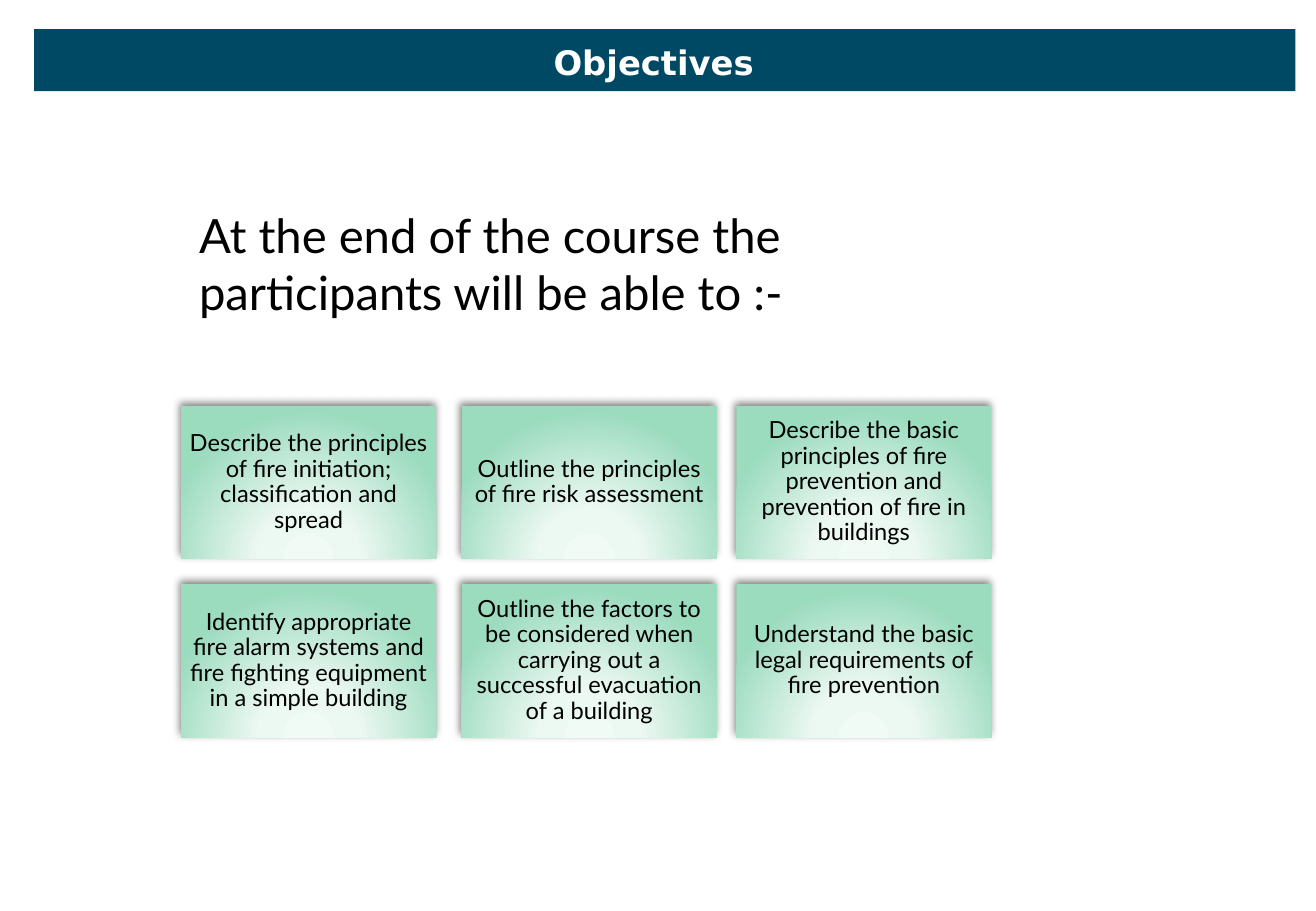
from itertools import product

from pptx import Presentation
from pptx.dml.color import RGBColor
from pptx.enum.shapes import MSO_SHAPE
from pptx.enum.text import MSO_ANCHOR, PP_ALIGN
from pptx.oxml import parse_xml
from pptx.oxml.ns import nsdecls
from pptx.util import Inches, Pt

COLORS = {
    "bar": "004964",
    "heading": "FFFFFF",
    "text": "000000",
    "shadow": "000000",
    "glow": "F0FBF6",
    "pale": "ECF8F2",
    "green": "9BDBBE",
}

GRADIENT = f"""<a:gradFill {nsdecls("a")} rotWithShape="1"><a:gsLst>
<a:gs pos="0"><a:srgbClr val="{COLORS['glow']}"/></a:gs>
<a:gs pos="34000"><a:srgbClr val="{COLORS['pale']}"/></a:gs>
<a:gs pos="100000"><a:srgbClr val="{COLORS['green']}"/></a:gs></a:gsLst>
<a:path path="circle"><a:fillToRect l="50000" t="155000" r="50000" b="-55000"/></a:path>
</a:gradFill>"""

SHADOW = f"""<a:effectLst {nsdecls("a")}>
<a:outerShdw blurRad="{Pt(5)}" dist="{Pt(2)}" dir="14700000" algn="tl" rotWithShape="0">
<a:srgbClr val="{COLORS['shadow']}"><a:alpha val="50000"/></a:srgbClr>
</a:outerShdw></a:effectLst>"""


class ObjectivesSlide:
    body_font = "Lato"
    heading_font = "DejaVu Sans"

    def __init__(self, deck):
        self.slide = deck.slides.add_slide(deck.slide_layouts[5])
        self.shapes = self.slide.shapes

    def set_text(self, frame, text, size, color="text", font=body_font, bold=False,
                 align=PP_ALIGN.LEFT):
        frame.text = text
        paragraph = frame.paragraphs[0]
        paragraph.alignment = align
        run_font = paragraph.runs[0].font
        run_font.name, run_font.size, run_font.bold = font, Pt(size), bold
        run_font.color.rgb = RGBColor.from_string(COLORS[color])
        return paragraph

    def rectangle(self, *place):
        rectangle = self.shapes.add_shape(MSO_SHAPE.RECTANGLE, *map(Inches, place))
        rectangle.line.fill.background()
        return rectangle

    def heading_bar(self, *place):
        bar = self.rectangle(*place)
        bar.shadow.inherit = False
        bar.fill.solid()
        bar.fill.fore_color.rgb = RGBColor.from_string(COLORS["bar"])
        # Send the bar behind the title placeholder
        self.shapes.title._element.addprevious(bar._element)

    def heading(self, text, *place):
        title = self.shapes.title
        title.left, title.top, title.width, title.height = map(Inches, place)
        frame = title.text_frame
        frame.word_wrap = False
        frame.vertical_anchor = MSO_ANCHOR.TOP
        self.set_text(frame, text, 20, "heading", self.heading_font, True, PP_ALIGN.CENTER)

    def intro(self, text, *place):
        frame = self.shapes.add_textbox(*map(Inches, place)).text_frame
        frame.word_wrap = True
        self.set_text(frame, text, 28)

    def card(self, text, *place):
        card = self.rectangle(*place)
        properties = card._element.spPr
        properties.insert(2, parse_xml(GRADIENT))
        properties.append(parse_xml(SHADOW))
        frame = card.text_frame
        frame.word_wrap = True
        frame.vertical_anchor = MSO_ANCHOR.MIDDLE
        frame.margin_left = frame.margin_right = Inches(0.06)
        frame.margin_top = frame.margin_bottom = Inches(0.06)
        paragraph = self.set_text(frame, text, 14, align=PP_ALIGN.CENTER)
        paragraph.line_spacing = 0.9


def main():
    deck = Presentation()
    deck.slide_width, deck.slide_height = Inches(10.83), Inches(7.5)
    page = ObjectivesSlide(deck)

    # Heading and introduction
    page.heading_bar(0.28, 0.24, 10.38, 0.51)
    page.heading("Objectives", 4.45, 0.29, 1.86, 0.44)
    page.intro("At the end of the course the participants will be able to :-",
               1.54, 1.65, 6.96, 1.04)

    # Grid of objectives, row by row
    objectives = [
        "Describe the principles of fire initiation; classification and spread",
        "Outline the principles of fire risk assessment",
        "Describe the basic principles of fire prevention and prevention of fire in buildings",
        "Identify appropriate fire alarm systems and fire fighting equipment in a simple building",
        "Outline the factors to be considered when carrying out a successful evacuation "
        "of a building",
        "Understand the basic legal requirements of fire prevention",
    ]
    row_tops, column_lefts = (3.34, 4.81), (1.49, 3.8, 6.06)
    for objective, (top, left) in zip(objectives, product(row_tops, column_lefts)):
        page.card(objective, left, top, 2.1, 1.26)

    deck.save("out.pptx")


if __name__ == "__main__":
    main()
